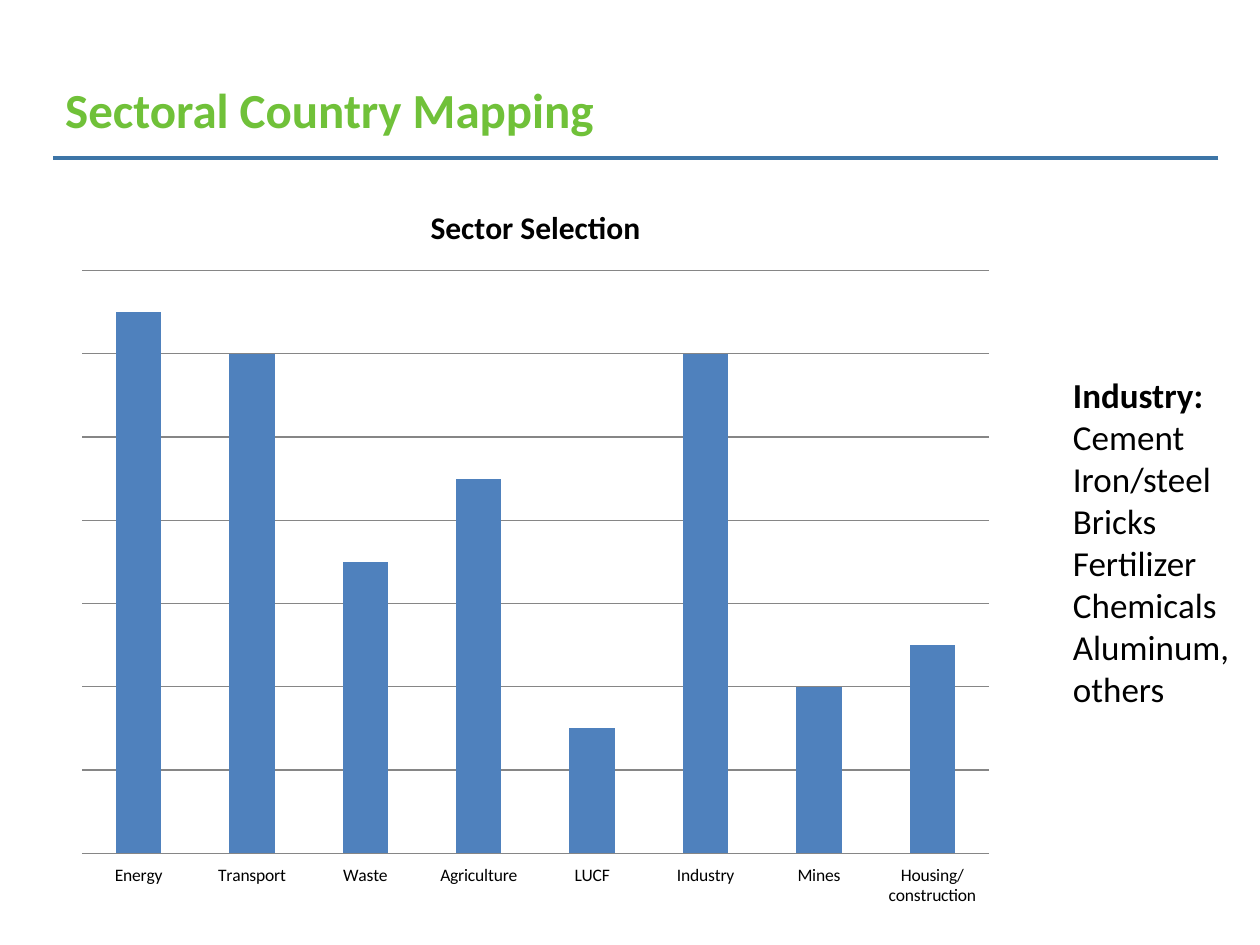
from lxml import etree
from pptx import Presentation
from pptx.chart.data import CategoryChartData
from pptx.dml.color import RGBColor
from pptx.enum.chart import XL_CHART_TYPE as ChartType, XL_TICK_LABEL_POSITION as LabelPosition
from pptx.enum.chart import XL_TICK_MARK as TickMark
from pptx.enum.shapes import MSO_CONNECTOR as Connector
from pptx.enum.text import MSO_ANCHOR as Anchor, PP_ALIGN as Align
from pptx.oxml import parse_xml
from pptx.oxml.ns import nsdecls, qn
from pptx.util import Cm, Pt

GREEN = RGBColor(0x70, 0xC1, 0x39)
RULE_BLUE = RGBColor(0x3D, 0x75, 0xA7)
BAR_BLUE = RGBColor(0x4F, 0x81, 0xBD)
GRID_GREY = RGBColor(0x86, 0x86, 0x86)
BLACK = RGBColor(0, 0, 0)
FONT = "Calibri"

SECTOR_SCORES = {
    "Energy": 6.5,
    "Transport": 6,
    "Waste": 3.5,
    "Agriculture": 4.5,
    "LUCF": 1.5,
    "Industry": 6,
    "Mines": 2,
    "Housing/construction": 2.5,
}
INDUSTRIES = ["Cement", "Iron/steel", "Bricks", "Fertilizer", "Chemicals", "Aluminum, others"]


def format_font(font, size, color=BLACK, bold=False):
    values = {"name": FONT, "size": Pt(size), "bold": bold}
    for name, value in values.items():
        setattr(font, name, value)
    font.color.rgb = color


def place(shape, box):
    for name, value in zip(("left", "top", "width", "height"), box):
        setattr(shape, name, Cm(value))


def add_heading(slide, box):
    """Fill the title placeholder and draw the rule below it."""
    left, top, width, height = box
    title = slide.shapes.title
    place(title, (left, top, 18.42, height))
    frame = title.text_frame
    frame.text = "Sectoral Country Mapping"
    frame.vertical_anchor = Anchor.TOP
    paragraph = frame.paragraphs[0]
    paragraph.alignment = Align.LEFT
    format_font(paragraph.runs[0].font, 28, GREEN, bold=True)

    rule_y = Cm(top + height + 0.25)
    rule = slide.shapes.add_connector(
        Connector.STRAIGHT, Cm(left + width), rule_y, Cm(left), rule_y)
    rule.line.color.rgb = RULE_BLUE
    rule.line.width = Pt(2)
    etree.SubElement(rule._element.spPr, qn("a:effectLst"))


def set_plot_layout(chart, x, y, width, height):
    """Fix the inner plot area, in fractions of the chart."""
    plot_area = chart._chartSpace.chart.plotArea
    for old_layout in plot_area.findall(qn("c:layout")):
        plot_area.remove(old_layout)
    plot_area.insert(0, parse_xml(
        f'<c:layout {nsdecls("c")}><c:manualLayout><c:layoutTarget val="inner"/>'
        '<c:xMode val="edge"/><c:yMode val="edge"/>'
        f'<c:x val="{x}"/><c:y val="{y}"/><c:w val="{width}"/><c:h val="{height}"/>'
        '</c:manualLayout></c:layout>'))


def add_sector_chart(slide, box):
    data = CategoryChartData()
    data.categories = list(SECTOR_SCORES)
    data.add_series("Series 1", list(SECTOR_SCORES.values()))
    chart = slide.shapes.add_chart(
        ChartType.COLUMN_CLUSTERED, *(Cm(value) for value in box), data).chart
    format_font(chart.font, 10)
    chart.has_legend = False
    chart.has_title = True
    title_frame = chart.chart_title.text_frame
    title_frame.text = "Sector Selection"
    format_font(title_frame.paragraphs[0].runs[0].font, 18, bold=True)

    plot = chart.plots[0]
    plot.gap_width = 150
    plot.vary_by_categories = False
    fill = plot.series[0].format.fill
    fill.solid()
    fill.fore_color.rgb = BAR_BLUE

    category_axis, value_axis = chart.category_axis, chart.value_axis
    category_axis.major_tick_mark = TickMark.NONE
    category_axis.tick_label_position = LabelPosition.LOW
    value_axis.visible = False
    value_axis.has_major_gridlines = True
    for name, value in {"minimum_scale": 0, "maximum_scale": 7, "major_unit": 1}.items():
        setattr(value_axis, name, value)
    for line in (category_axis.format.line, value_axis.major_gridlines.format.line):
        line.color.rgb = GRID_GREY
        line.width = Pt(0.75)
    set_plot_layout(chart, 0.02, 0.125, 0.96, 0.793)


def add_industry_list(slide, box):
    frame = slide.shapes.add_textbox(*(Cm(value) for value in box)).text_frame
    frame.word_wrap = True
    for index, text in enumerate(["Industry:"] + INDUSTRIES):
        paragraph = frame.paragraphs[0] if index == 0 else frame.add_paragraph()
        run = paragraph.add_run()
        run.text = text
        format_font(run.font, 20, bold=index == 0)


def main():
    presentation = Presentation()
    presentation.slide_width, presentation.slide_height = Cm(25.4), Cm(19.05)
    slide = presentation.slides.add_slide(presentation.slide_layouts.get_by_name("Title Only"))
    add_heading(slide, (1.06, 1.48, 23.5, 1.45))
    add_sector_chart(slide, (1.27, 3.6, 19.05, 14.82))
    add_industry_list(slide, (21.38, 7.41, 4.02, 7.09))
    presentation.save("out.pptx")


if __name__ == "__main__":
    main()
